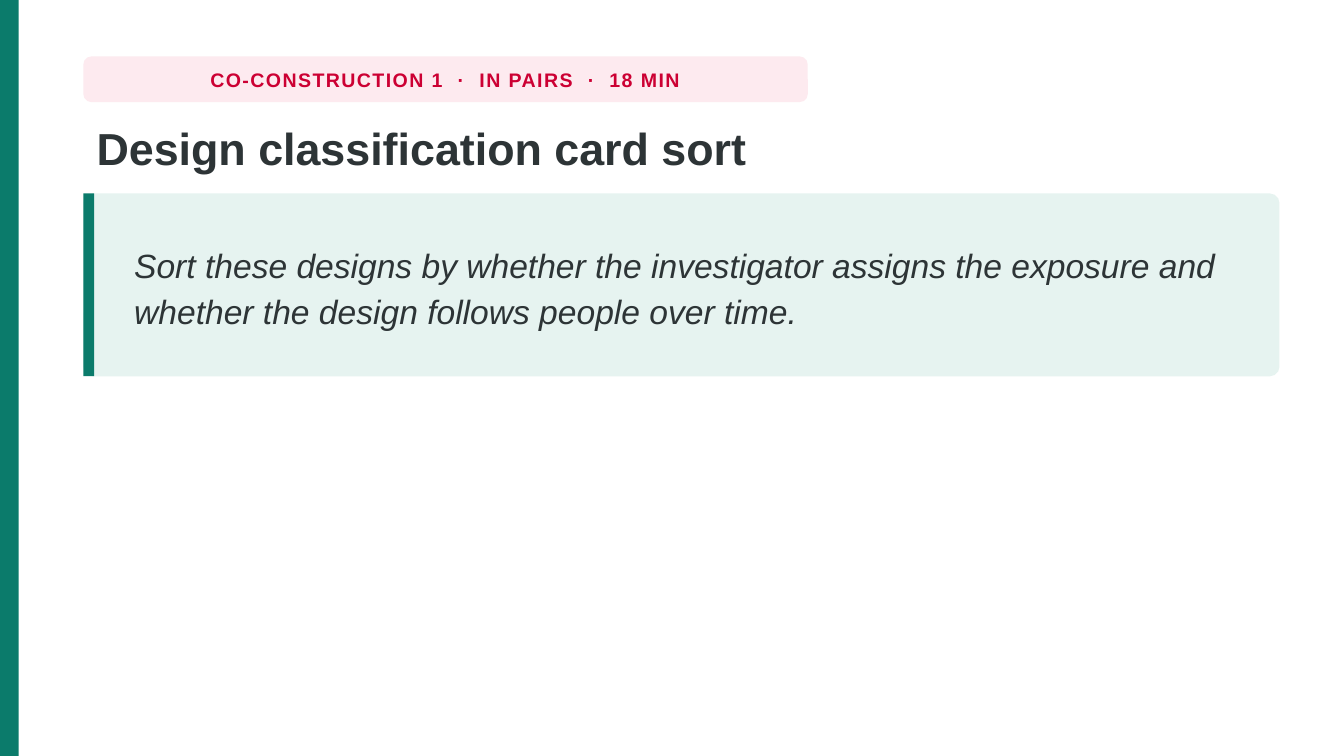
from dataclasses import dataclass

import pptx
import pptx.dml.color
import pptx.enum.shapes
import pptx.enum.text
import pptx.shapes.autoshape
import pptx.slide
import pptx.util

Inches = pptx.util.Inches
SHAPE = pptx.enum.shapes.MSO_SHAPE
ANCHOR = pptx.enum.text.MSO_ANCHOR
ALIGN = pptx.enum.text.PP_ALIGN

COLORS = {
    "background": "FFFFFF",
    "accent": "0B7B6B",
    "tag_fill": "FDEAEF",
    "tag_text": "CC0033",
    "prompt_fill": "E6F3F0",
    "ink": "2D3436",
}
FONT = "Arial"
WIDTH = 10
HEIGHT = WIDTH * 9 / 16
LEFT, CONTENT_WIDTH = 0.62, 8.9
PROMPT_TOP, PROMPT_HEIGHT = 1.44, 1.36


@dataclass
class Box:
    left: float
    top: float
    width: float
    height: float

    def lengths(self) -> tuple:
        return tuple(Inches(v) for v in (self.left, self.top, self.width, self.height))


@dataclass
class Panel:
    box: Box
    color: str
    radius: float = 0  # inches


@dataclass
class Label:
    box: Box
    text: str
    size: float
    color: str
    bold: bool = False
    italic: bool = False
    anchor: ANCHOR = ANCHOR.TOP
    align: ALIGN = ALIGN.LEFT
    wrap: bool = True
    line_spacing: float = 1.0
    tracking: float = 0  # points


def rgb(name: str) -> pptx.dml.color.RGBColor:
    return pptx.dml.color.RGBColor.from_string(COLORS[name])


def draw_panel(s: pptx.slide.Slide, panel: Panel) -> pptx.shapes.autoshape.Shape:
    kind = SHAPE.ROUNDED_RECTANGLE if panel.radius else SHAPE.RECTANGLE
    sp = s.shapes.add_shape(kind, *panel.box.lengths())
    if panel.radius:
        sp.adjustments[0] = panel.radius / min(panel.box.width, panel.box.height)
    sp.shadow.inherit = False
    sp.fill.solid()
    sp.fill.fore_color.rgb = rgb(panel.color)
    sp.line.fill.background()
    return sp


def draw_label(s: pptx.slide.Slide, label: Label) -> pptx.shapes.autoshape.Shape:
    sp = s.shapes.add_textbox(*label.box.lengths())
    tf = sp.text_frame
    tf.word_wrap = label.wrap
    tf.vertical_anchor = label.anchor
    tf.text = label.text
    p = tf.paragraphs[0]
    p.alignment = label.align
    p.line_spacing = label.line_spacing
    r = p.runs[0]
    r.font.name = FONT
    r.font.size = pptx.util.Pt(label.size)
    r.font.bold = label.bold
    r.font.italic = label.italic
    r.font.color.rgb = rgb(label.color)
    if label.tracking:
        r.font._element.set("spc", str(round(label.tracking * 100)))
    return sp


def main() -> None:
    prs = pptx.Presentation()
    prs.slide_width, prs.slide_height = Inches(WIDTH), Inches(HEIGHT)
    s = prs.slides.add_slide(prs.slide_layouts[6])
    s.background.fill.solid()
    s.background.fill.fore_color.rgb = rgb("background")

    tag_box = Box(LEFT, 0.42, 5.39, 0.34)
    prompt_box = Box(LEFT, PROMPT_TOP, CONTENT_WIDTH, PROMPT_HEIGHT)

    # Side band, activity tag, prompt card and its accent bar
    panels = [
        Panel(Box(0, 0, 0.14, HEIGHT), "accent"),
        Panel(tag_box, "tag_fill", 0.06),
        Panel(prompt_box, "prompt_fill", 0.07),
        Panel(Box(LEFT, PROMPT_TOP, 0.08, PROMPT_HEIGHT), "accent"),
    ]
    for panel in panels:
        draw_panel(s, panel)

    # Tag text, title and prompt
    labels = [
        Label(tag_box, "CO-CONSTRUCTION 1  ·  IN PAIRS  ·  18 MIN", 10.5, "tag_text",
              bold=True, anchor=ANCHOR.MIDDLE, align=ALIGN.CENTER, wrap=False, tracking=0.8),
        Label(Box(LEFT, 0.84, CONTENT_WIDTH, 0.56), "Design classification card sort",
              24, "ink", bold=True, line_spacing=1.02),
        Label(Box(0.9, PROMPT_TOP + 0.05, 8.35, PROMPT_HEIGHT - 0.1),
              "Sort these designs by whether the investigator assigns the exposure "
              "and whether the design follows people over time.",
              18, "ink", italic=True, anchor=ANCHOR.MIDDLE, line_spacing=1.16),
    ]
    for label in labels:
        draw_label(s, label)

    prs.save("out.pptx")


if __name__ == "__main__":
    main()
